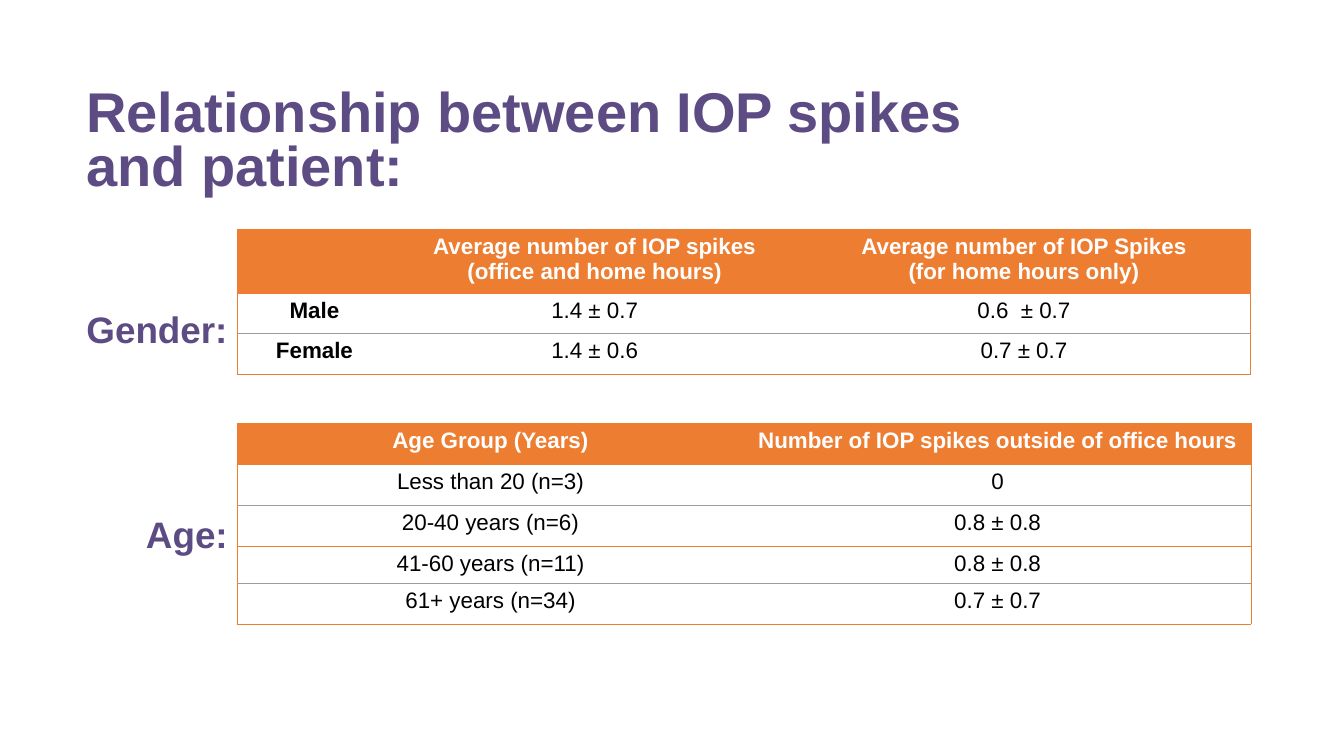
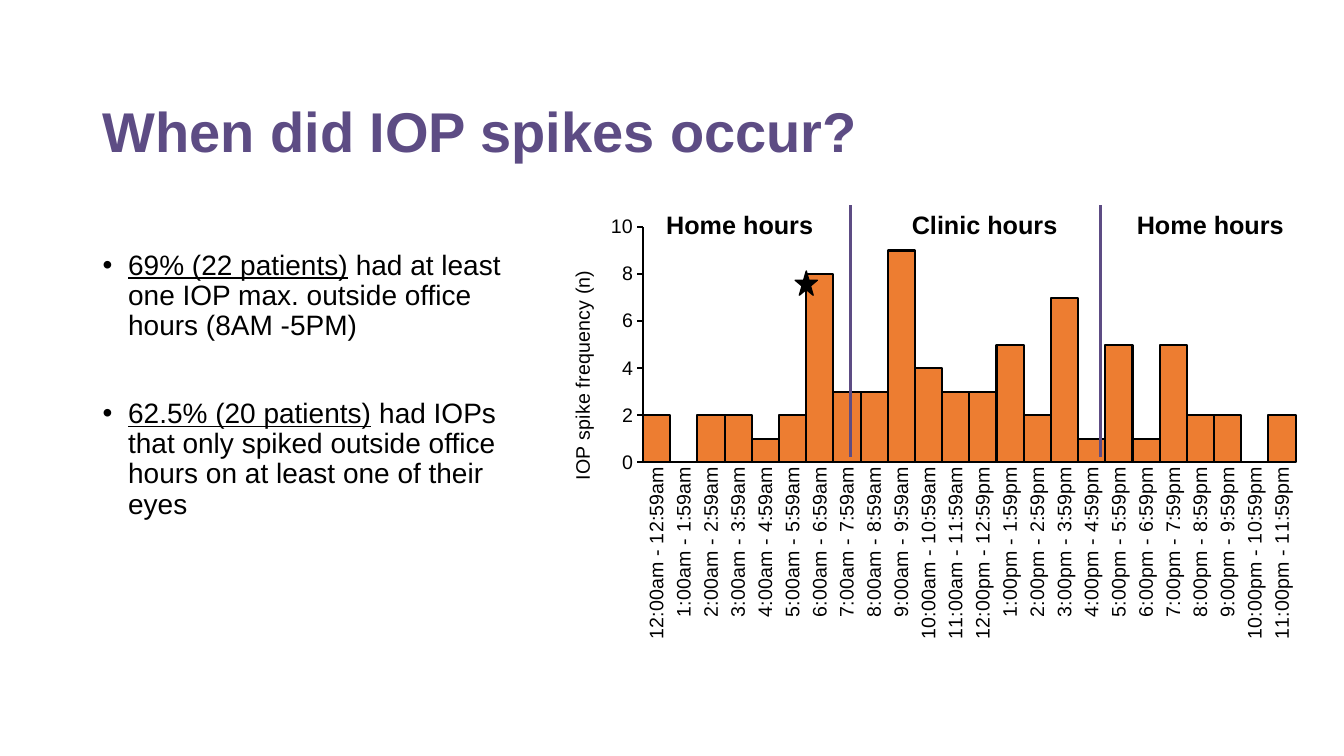
"""Build two slides on IOP spikes: patient tables and an hourly frequency chart."""
from dataclasses import dataclass

import pptx
import pptx.chart.data
import pptx.dml.color
import pptx.enum.chart
import pptx.enum.shapes
import pptx.enum.text
import pptx.oxml.ns
import pptx.util
from lxml import etree

Cm = pptx.util.Cm
Pt = pptx.util.Pt
qn = pptx.oxml.ns.qn

COLORS = {
    "purple": "5D4C84",
    "orange": "ED7D31",
    "gray": "9C9C9C",
    "black": "000000",
    "white": "FFFFFF",
}
FONT = "Arial"
TABLE_LEFT = 5.97
CHART_TOP = 5.16


@dataclass(frozen=True)
class Label:
    text: str
    left: float
    top: float
    width: float
    height: float
    size: float
    color: str = "purple"
    spacing: float | None = 0.8
    middle: bool = True


@dataclass(frozen=True)
class Row:
    cells: tuple[str, ...]
    height: float = 1.03
    rule: str = "gray"


@dataclass(frozen=True)
class Grid:
    top: float
    widths: tuple[float, ...]
    rows: tuple[Row, ...]
    bold_first: bool = False


@dataclass(frozen=True)
class Finding:
    figure: str
    detail: str
    space_before: float


def title(text: str, left: float, top: float, height: float) -> Label:
    """Return a slide title in the shared style."""
    return Label(text, left, top, 25.07, height, 40)


def row_title(text: str, left: float, top: float, width: float) -> Label:
    """Return a heading that stands left of a table."""
    return Label(text, left, top, width, 1.98, 26.3)


def period(text: str, left: float) -> Label:
    """Return a caption for a part of the day."""
    return Label(text, left, CHART_TOP, 4.65, 1.02, 18, "black", None, False)


RELATIONSHIP_LABELS = (
    title("Relationship between IOP spikes and patient:", 1.93, 2.62, 1.98),
    row_title("Gender:", 1.93, 7.39, 4.34),
    row_title("Age:", 3.43, 12.57, 2.84),
)
GENDER = Grid(5.77, (3.91, 10.21, 11.43), (
    Row(("", "Average number of IOP spikes\n(office and home hours)",
         "Average number of IOP Spikes\n(for home hours only)"), 1.51, "orange"),
    Row(("Male", "1.4 ± 0.7", "0.6  ± 0.7")),
    Row(("Female", "1.4 ± 0.6", "0.7 ± 0.7"), rule="orange"),
), bold_first=True)
AGE = Grid(10.67, (12.78, 12.78), (
    Row(("Age Group (Years)", "Number of IOP spikes outside of office hours"), rule="orange"),
    Row(("Less than 20 (n=3)", "0")),
    Row(("20-40 years (n=6)", "0.8 ± 0.8"), rule="orange"),
    Row(("41-60 years (n=11)", "0.8 ± 0.8"), 0.89),
    Row(("61+ years (n=34)", "0.7 ± 0.7"), rule="orange"),
))
TIMING_LABELS = (
    title("When did IOP spikes occur?", 2.34, 2.06, 2.77),
    period("Home hours", 16.54),
    period("Clinic hours", 22.73),
    period("Home hours", 28.4),
)
FINDINGS = (
    Finding("69% (22 patients)",
            " had at least one IOP max. outside office hours (8AM -5PM)", 0),
    Finding("62.5% (20 patients)",
            " had IOPs that only spiked outside office hours on at least one of their eyes", 41),
)
HOURS = [f"{hour}:00{half} - {hour}:59{half}"
         for half in ("am", "pm") for hour in (12, *range(1, 12))]
SPIKES = (2, 0, 2, 2, 1, 2, 8, 3, 3, 9, 4, 3, 3, 5, 2, 7, 1, 5, 1, 5, 2, 2, 0, 2)
CLINIC_LIMITS = (21.44, 27.74)


def rgb(color: str) -> pptx.dml.color.RGBColor:
    """Return a palette colour."""
    return pptx.dml.color.RGBColor.from_string(COLORS[color])


def style_font(font, size: float, color: str = "black", bold: bool = False) -> None:
    """Apply the deck's typeface with a size, colour and weight."""
    font.name = FONT
    font.size = Pt(size)
    font.bold = bold
    font.color.rgb = rgb(color)


def style_line(line, color: str, width: float) -> None:
    """Apply a solid line."""
    line.color.rgb = rgb(color)
    line.width = Pt(width)


def add_label(slide, label: Label) -> None:
    """Add one bold text label."""
    box = slide.shapes.add_textbox(
        Cm(label.left), Cm(label.top), Cm(label.width), Cm(label.height))
    frame = box.text_frame
    frame.word_wrap = True
    if label.middle:
        frame.vertical_anchor = pptx.enum.text.MSO_ANCHOR.MIDDLE
    frame.text = label.text
    paragraph = frame.paragraphs[0]
    if label.spacing:
        paragraph.line_spacing = label.spacing
    style_font(paragraph.runs[0].font, label.size, label.color, True)


def set_borders(cell, colors: dict[str, str | None]) -> None:
    """Set the four cell borders, leaving out those without a colour."""
    properties = cell._tc.get_or_add_tcPr()
    for index, (side, color) in enumerate(colors.items()):
        border = etree.Element(qn(f"a:ln{side}"), w=str(Pt(0.5)))
        if color:
            fill = etree.SubElement(border, qn("a:solidFill"))
            etree.SubElement(fill, qn("a:srgbClr"), val=COLORS[color])
        else:
            etree.SubElement(border, qn("a:noFill"))
        properties.insert(index, border)


def add_grid(slide, grid: Grid) -> None:
    """Add a table with an orange header and ruled rows."""
    last_column = len(grid.widths) - 1
    table = slide.shapes.add_table(
        len(grid.rows), len(grid.widths), Cm(TABLE_LEFT), Cm(grid.top),
        Cm(sum(grid.widths)), Cm(sum(row.height for row in grid.rows))).table
    table.horz_banding = False
    for column, width in zip(table.columns, grid.widths):
        column.width = Cm(width)
    rule_above = "orange"
    for r, row in enumerate(grid.rows):
        table.rows[r].height = Cm(row.height)
        header = r == 0
        for c, text in enumerate(row.cells):
            cell = table.cell(r, c)
            cell.fill.solid()
            cell.fill.fore_color.rgb = rgb("orange" if header else "white")
            set_borders(cell, {
                "L": "orange" if c == 0 else None,
                "R": "orange" if c == last_column else None,
                "T": rule_above,
                "B": row.rule,
            })
            cell.text_frame.text = text
            for paragraph in cell.text_frame.paragraphs:
                paragraph.alignment = pptx.enum.text.PP_ALIGN.CENTER
                for run in paragraph.runs:
                    style_font(run.font, 16, "white" if header else "black",
                               header or (grid.bold_first and c == 0))
        rule_above = row.rule


def add_findings(slide, findings: tuple[Finding, ...]) -> None:
    """Add the bulleted findings with underlined figures."""
    frame = slide.shapes.add_textbox(Cm(2.34), Cm(6.2), Cm(11.68), Cm(10.16)).text_frame
    frame.word_wrap = True
    for index, finding in enumerate(findings):
        paragraph = frame.add_paragraph() if index else frame.paragraphs[0]
        paragraph.line_spacing = 0.9
        paragraph.space_before = Pt(finding.space_before)
        properties = paragraph._p.get_or_add_pPr()
        properties.set("marL", str(Cm(0.64)))
        properties.set("indent", str(-Cm(0.64)))
        etree.SubElement(properties, qn("a:buFont"), typeface=FONT)
        etree.SubElement(properties, qn("a:buChar"), char="•")
        for text, underlined in ((finding.figure, True), (finding.detail, False)):
            run = paragraph.add_run()
            run.text = text
            style_font(run.font, 20)
            run.font.underline = underlined


def set_layout(parent, index: int, places: dict[str, str | float]) -> None:
    """Give a chart part a manual layout."""
    for automatic in parent.findall(qn("c:layout")):
        parent.remove(automatic)
    layout = etree.Element(qn("c:layout"))
    manual = etree.SubElement(layout, qn("c:manualLayout"))
    for tag, value in places.items():
        etree.SubElement(manual, qn(f"c:{tag}"), val=str(value))
    parent.insert(index, layout)


def add_frequency_chart(slide) -> None:
    """Add the column chart of spikes by hour."""
    data = pptx.chart.data.CategoryChartData()
    data.categories = HOURS
    data.add_series("Series 1", SPIKES)
    chart = slide.shapes.add_chart(
        pptx.enum.chart.XL_CHART_TYPE.COLUMN_CLUSTERED,
        Cm(13.69), Cm(CHART_TOP), Cm(19.35), Cm(11.2), data).chart
    chart.has_legend = False
    chart.has_title = False
    style_font(chart.font, 14)
    plot = chart.plots[0]
    plot.gap_width = 0
    plot.overlap = -11
    plot.vary_by_categories = False
    columns = plot.series[0].format
    columns.fill.solid()
    columns.fill.fore_color.rgb = rgb("orange")
    style_line(columns.line, "black", 1.5)

    hours, frequency = chart.category_axis, chart.value_axis
    marks = pptx.enum.chart.XL_TICK_MARK
    for axis, mark in ((hours, marks.NONE), (frequency, marks.OUTSIDE)):
        axis.has_major_gridlines = False
        axis.major_tick_mark = mark
        axis.minor_tick_mark = marks.NONE
        style_line(axis.format.line, "black", 1.5)
        style_font(axis.tick_labels.font, 14)
    hours._element.find(qn("c:txPr")).find(qn("a:bodyPr")).set("rot", "-5400000")
    frequency.minimum_scale = 0
    frequency.maximum_scale = 10
    frequency.major_unit = 2
    caption = frequency.axis_title
    caption.text_frame.text = "IOP spike frequency (n)"
    style_font(caption.text_frame.paragraphs[0].runs[0].font, 14)
    set_layout(caption._element, 1, {"xMode": "edge", "yMode": "edge", "x": 0.03, "y": 0.14})
    set_layout(chart._chartSpace.chart.plotArea, 0, {
        "layoutTarget": "inner", "xMode": "edge", "yMode": "edge",
        "x": 0.13, "y": 0.05, "w": 0.85, "h": 0.53})


def add_clinic_limit(slide, x: float) -> None:
    """Add a vertical line between home and clinic hours."""
    limit = slide.shapes.add_connector(
        pptx.enum.shapes.MSO_CONNECTOR.STRAIGHT, Cm(x), Cm(11.51), Cm(x), Cm(CHART_TOP))
    style_line(limit.line, "purple", 2.25)
    etree.SubElement(limit._element.spPr, qn("a:effectLst"))


def add_star(slide) -> None:
    """Add the star beside the early morning peak."""
    star = slide.shapes.add_shape(
        pptx.enum.shapes.MSO_SHAPE.STAR_5_POINT, Cm(20.04), Cm(6.83), Cm(0.56), Cm(0.61))
    star.shadow.inherit = False
    star.fill.solid()
    star.fill.fore_color.rgb = rgb("black")
    style_line(star.line, "black", 1)


def main() -> None:
    """Build and save the presentation."""
    deck = pptx.Presentation()
    deck.slide_width, deck.slide_height = Cm(33.87), Cm(19.05)
    blank = deck.slide_layouts[6]

    relationship = deck.slides.add_slide(blank)
    for label in RELATIONSHIP_LABELS:
        add_label(relationship, label)
    for grid in (GENDER, AGE):
        add_grid(relationship, grid)

    timing = deck.slides.add_slide(blank)
    add_findings(timing, FINDINGS)
    add_frequency_chart(timing)
    for x in CLINIC_LIMITS:
        add_clinic_limit(timing, x)
    for label in TIMING_LABELS:
        add_label(timing, label)
    add_star(timing)
    deck.save("out.pptx")


if __name__ == "__main__":
    main()
